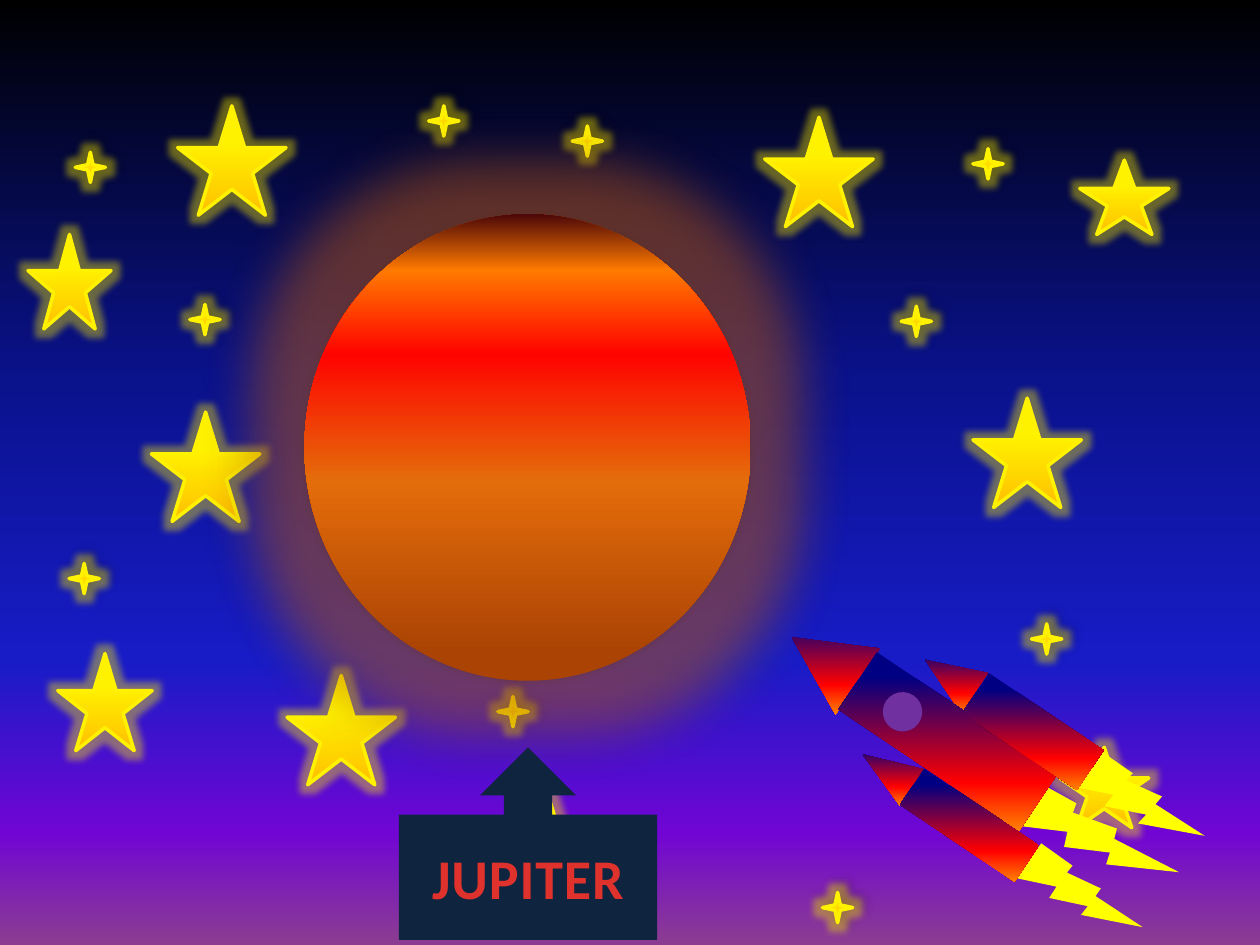
from typing import NamedTuple

from lxml.etree import SubElement
from pptx import Presentation
from pptx.dml.color import RGBColor
from pptx.enum.shapes import MSO_SHAPE as Shape
from pptx.enum.text import MSO_ANCHOR, PP_ALIGN
from pptx.oxml.ns import qn
from pptx.util import Pt

YELLOW = RGBColor(0xFF, 0xF2, 0x00)
AMBER = RGBColor(0xFF, 0xC0, 0x00)
FLAME = RGBColor(0xFF, 0xFF, 0x00)
ORANGE = RGBColor(0xE4, 0x6C, 0x0A)
PURPLE = RGBColor(0x70, 0x30, 0xA0)
NAVY = RGBColor(0x0F, 0x24, 0x3E)
BLACK = RGBColor(0x00, 0x00, 0x00)
RED = RGBColor(0xFF, 0x00, 0x00)

SKY = [(0, BLACK), (40, RGBColor(0x0A, 0x12, 0x8C)), (70, RGBColor(0x18, 0x1C, 0xC7)),
       (88, RGBColor(0x70, 0x05, 0xD4)), (100, RGBColor(0x8C, 0x3D, 0x91))]
BIG_STAR = [(33, YELLOW), (99, AMBER)]
SMALL_STAR = [(9, YELLOW), (100, AMBER)]
PLANET = [(6, RGBColor(0xAA, 0x43, 0x04)), (43, ORANGE), (70, RGBColor(0xFF, 0x03, 0x00)),
          (88, RGBColor(0xFF, 0x7A, 0x00)), (100, RGBColor(0x4D, 0x08, 0x08))]
ROCKET = [(14, RGBColor(0x00, 0x00, 0x82)), (73, RED), (100, RGBColor(0xFF, 0x82, 0x00))]
LETTERS = [(25, RGBColor(0xE0, 0x32, 0x2D)), (100, RGBColor(0xA2, 0x20, 0x1C))]

TILT = 303.9


class Box(NamedTuple):
    left: float
    top: float
    width: float
    height: float
    rotation: float = 0


BIG_STARS = [
    Box(101.5, 60.5, 62, 62.5), Box(16, 134, 47.5, 54), Box(86.5, 235.5, 62, 62.5),
    Box(164, 386, 62, 62.5), Box(437, 67, 62, 62.5), Box(33, 373.5, 54, 55.5),
    Box(282, 453.5, 62, 62.5), Box(605.5, 427, 51, 46), Box(556, 227.5, 62, 62.5),
    Box(617, 91.5, 51, 42.5),
]
SMALL_SIZE = 17.3
SMALL_STARS = [
    Box(left, top, SMALL_SIZE, SMALL_SIZE)
    for left, top in [(108.5, 174), (43, 87), (327, 72), (245, 60.5), (39.5, 322),
                      (470, 510), (284.5, 398), (556, 85), (589.5, 356.5), (515, 175)]
]
FLAMES = [Box(617, 424, 61, 67.5, 338), Box(587, 476.5, 54.5, 67.5, 335.7),
          Box(594.5, 432, 57, 93, 322.9)]
NOSES = [Box(448.5, 354, 45.5, 45.5, TILT), Box(529, 369.5, 27.5, 34, TILT),
         Box(494.5, 423.5, 25, 34, TILT)]
BODIES = [Box(522, 361.5, 39.5, 124.5, TILT), Box(576.5, 378.5, 27.5, 79, TILT),
          Box(541.5, 432, 25, 79, TILT)]


def set_gradient(fill, holder, stops: list, angle: int = 90) -> None:
    """Give fill a linear gradient that stays upright; holder is the XML element around it."""
    fill.gradient()
    grad = next(holder.iter(qn("a:gradFill")))
    grad.set("rotWithShape", "0")
    stop_list = grad.find(qn("a:gsLst"))
    for old in list(stop_list):
        stop_list.remove(old)
    for percent, color in stops:
        stop = SubElement(stop_list, qn("a:gs"), pos=str(percent * 1000))
        SubElement(stop, qn("a:srgbClr"), val=str(color))
    grad.find(qn("a:lin")).set("ang", str(angle * 60000))


def add_effect(sp, tag: str, color: RGBColor, alpha: int, **lengths: int) -> None:
    effects = sp._element.spPr.find(qn("a:effectLst"))
    attributes = {name: str(value) for name, value in lengths.items()}
    effect = SubElement(effects, qn(tag), attributes)
    clr = SubElement(effect, qn("a:srgbClr"), val=str(color))
    SubElement(clr, qn("a:alpha"), val=str(alpha * 1000))


def add_solid(shapes, kind: Shape, box: Box, color: RGBColor):
    sp = shapes.add_shape(kind, *(Pt(v) for v in box[:4]))
    sp.rotation = box.rotation
    sp.shadow.inherit = False
    sp.line.fill.background()
    sp.fill.solid()
    sp.fill.fore_color.rgb = color
    return sp


def add_graded(shapes, kind: Shape, box: Box, stops: list, angle: int = 90):
    sp = add_solid(shapes, kind, box, stops[0][1])
    set_gradient(sp.fill, sp._element.spPr, stops, angle)
    return sp


def add_star(shapes, kind: Shape, box: Box, stops: list):
    sp = add_graded(shapes, kind, box, stops)
    sp.line.color.rgb = YELLOW
    sp.line.width = Pt(2)
    add_effect(sp, "a:glow", YELLOW, 40, rad=Pt(8))
    return sp


def add_stars(s) -> None:
    shapes = s.shapes.add_group_shape().shapes
    for box in BIG_STARS:
        add_star(shapes, Shape.STAR_5_POINT, box, BIG_STAR)
    for box in SMALL_STARS:
        sp = add_star(shapes, Shape.STAR_4_POINT, box, SMALL_STAR)
        add_effect(sp, "a:outerShdw", BLACK, 40, blurRad=Pt(4), dist=Pt(3), dir=315 * 60000)


def add_planet(s) -> None:
    sp = add_graded(s.shapes, Shape.OVAL, Box(174, 122.5, 255, 266.5), PLANET, 270)
    add_effect(sp, "a:glow", ORANGE, 40, rad=Pt(60))
    add_effect(sp, "a:outerShdw", BLACK, 40, blurRad=Pt(5), dist=0, dir=0)


def add_rocket(s) -> None:
    shapes = s.shapes.add_group_shape().shapes
    for box in FLAMES:
        add_solid(shapes, Shape.LIGHTNING_BOLT, box, FLAME)
    for box in NOSES:
        add_graded(shapes, Shape.ISOSCELES_TRIANGLE, box, ROCKET)
    for box in BODIES:
        add_graded(shapes, Shape.RECTANGLE, box, ROCKET)
    add_solid(shapes, Shape.OVAL, Box(504.5, 395.5, 22.5, 22.5, TILT), PURPLE)


def add_label(s) -> None:
    sp = add_solid(s.shapes, Shape.UP_ARROW_CALLOUT, Box(228, 427, 147.5, 110), NAVY)
    tf = sp.text_frame
    tf.vertical_anchor = MSO_ANCHOR.MIDDLE
    p = tf.paragraphs[0]
    p.alignment = PP_ALIGN.CENTER
    r = p.add_run()
    r.text = "JUPITER"
    r.font.name = "Calibri"
    r.font.size = Pt(32)
    r.font.bold = True
    r._r.get_or_add_rPr().set("spc", "50")
    set_gradient(r.font.fill, r._r, LETTERS)


def main() -> None:
    prs = Presentation()
    prs.slide_width, prs.slide_height = Pt(720), Pt(540)
    s = prs.slides.add_slide(prs.slide_layouts[6])
    set_gradient(s.background.fill, s._element, SKY)
    add_stars(s)
    add_planet(s)
    add_rocket(s)
    add_label(s)
    prs.save("out.pptx")


if __name__ == "__main__":
    main()
